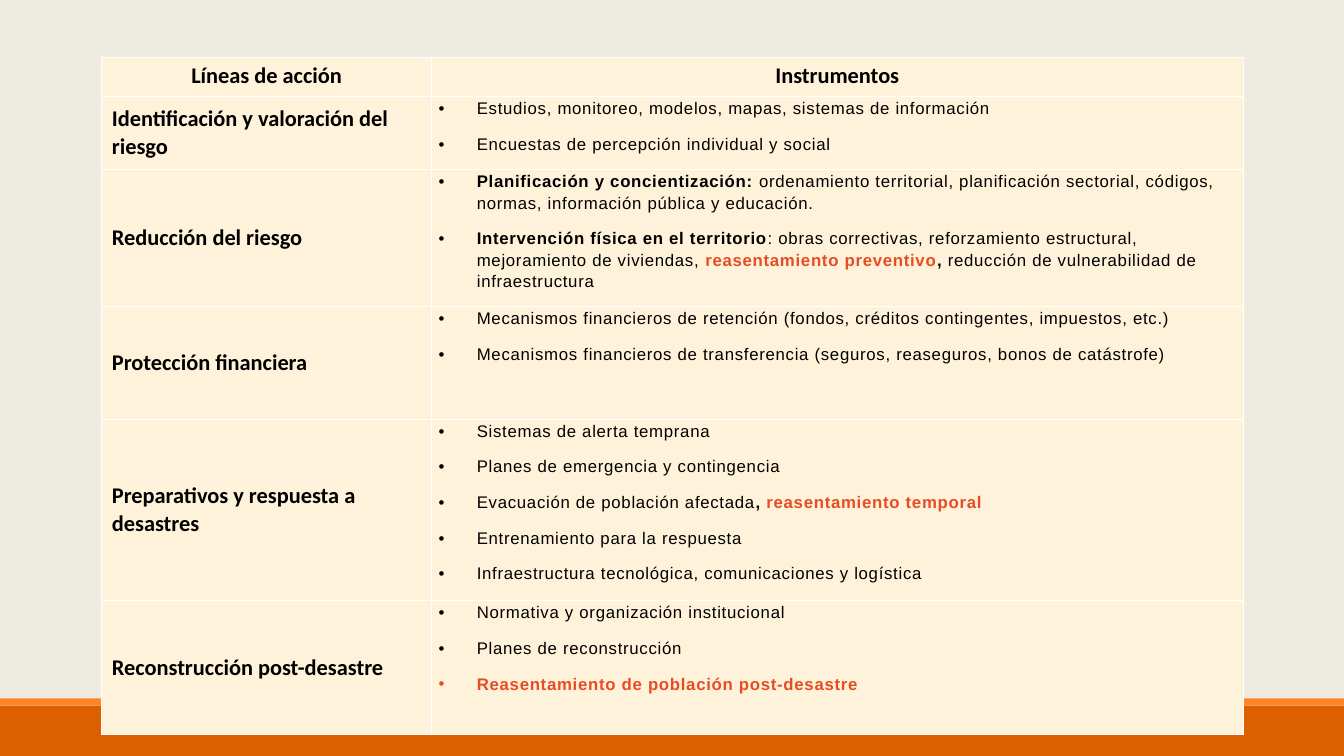
from lxml import etree
from pptx import Presentation
from pptx import util as u
from pptx.dml.color import RGBColor
from pptx.enum import shapes, text
from pptx.oxml import ns

COLORS = {"background": "EEECE1", "cell": "FFF2DA", "border": "FFFFFF", "ink": "000000",
          "accent": "E84C22", "band": "DC5F00", "band edge": "FF8427"}
WIDTH, HEIGHT = u.Inches(13.33), u.Inches(7.5)
COLUMNS = [3.27, 8.05]
ROWS = [0.39, 0.72, 1.36, 1.12, 1.8, 1.33]

# Each line of action with its instruments; an instrument is a list of (text, style) runs
PLAIN, BOLD, ACCENT = "plain", "bold", "accent"
ACTION_LINES = [
    ("Identificación y valoración del riesgo", [
        [("Estudios, monitoreo, modelos, mapas, sistemas de información", PLAIN)],
        [("Encuestas de percepción individual y social", PLAIN)]]),
    ("Reducción del riesgo", [
        [("Planificación y concientización:", BOLD),
         (" ordenamiento territorial, planificación sectorial, códigos, normas, "
          "información pública y educación.", PLAIN)],
        [("Intervención física en el territorio", BOLD),
         (": obras correctivas, reforzamiento estructural, mejoramiento de viviendas, ", PLAIN),
         ("reasentamiento preventivo", ACCENT), (",", BOLD),
         (" reducción de vulnerabilidad de infraestructura", PLAIN)]]),
    ("Protección financiera", [
        [("Mecanismos financieros de retención (fondos, créditos contingentes, "
          "impuestos, etc.)", PLAIN)],
        [("Mecanismos financieros de transferencia (seguros, reaseguros, "
          "bonos de catástrofe)", PLAIN)]]),
    ("Preparativos y respuesta a desastres", [
        [("Sistemas de alerta temprana", PLAIN)],
        [("Planes de emergencia y contingencia", PLAIN)],
        [("Evacuación de población afectada", PLAIN), (", ", BOLD),
         ("reasentamiento temporal", ACCENT)],
        [("Entrenamiento para la respuesta", PLAIN)],
        [("Infraestructura tecnológica, comunicaciones y logística", PLAIN)]]),
    ("Reconstrucción post-desastre", [
        [("Normativa y organización institucional", PLAIN)],
        [("Planes de reconstrucción", PLAIN)],
        [("Reasentamiento de población post-desastre", ACCENT)]]),
]


def add_text(paragraph, words, font="Calibri", size=16, bold=True, color="ink", spacing=0):
    run = paragraph.add_run()
    run.text = words
    run.font.name, run.font.size, run.font.bold = font, u.Pt(size), bold
    run.font.color.rgb = RGBColor.from_string(COLORS[color])
    if spacing:
        run.font._element.set("spc", str(int(spacing * 100)))


def add_bullet(paragraph):
    paragraph.line_spacing, paragraph.space_after = 1.15, u.Pt(10)
    props = paragraph._p.get_or_add_pPr()
    props.set("marL", str(u.Inches(0.38)))
    props.set("indent", str(-u.Inches(0.38)))
    etree.SubElement(props, ns.qn("a:buFont"), typeface="Arial")
    etree.SubElement(props, ns.qn("a:buChar"), char="•")
    tabs = etree.SubElement(props, ns.qn("a:tabLst"))
    etree.SubElement(tabs, ns.qn("a:tab"), pos=str(u.Inches(0.5)), algn="l")


prs = Presentation()
prs.slide_width, prs.slide_height = WIDTH, HEIGHT
slide = prs.slides.add_slide(prs.slide_layouts[6])
slide.background.fill.solid()
slide.background.fill.fore_color.rgb = RGBColor.from_string(COLORS["background"])

# Bands along the bottom
for color, top, height in [("band", 7, 0.5), ("band edge", 6.93, 0.07)]:
    band = slide.shapes.add_shape(shapes.MSO_SHAPE.RECTANGLE, 0, u.Inches(top),
                                  WIDTH, u.Inches(height))
    band.shadow.inherit = False
    band.fill.solid()
    band.fill.fore_color.rgb = RGBColor.from_string(COLORS[color])
    band.line.fill.background()

# Table grid
instruments_table = slide.shapes.add_table(
    len(ROWS), len(COLUMNS), u.Inches(1.01), u.Inches(0.57),
    u.Inches(sum(COLUMNS)), u.Inches(sum(ROWS))).table
for column, width in zip(instruments_table.columns, COLUMNS):
    column.width = u.Inches(width)
for row, height in zip(instruments_table.rows, ROWS):
    row.height = u.Inches(height)

# Cell borders, then fills
for cell in instruments_table.iter_cells():
    props = cell._tc.get_or_add_tcPr()
    for side in ("lnL", "lnR", "lnT", "lnB"):
        border = etree.SubElement(props, ns.qn(f"a:{side}"), w=str(u.Pt(1)))
        paint = etree.SubElement(border, ns.qn("a:solidFill"))
        etree.SubElement(paint, ns.qn("a:srgbClr"), val=COLORS["border"])
    cell.fill.solid()
    cell.fill.fore_color.rgb = RGBColor.from_string(COLORS["cell"])

# Header row
for column, heading in enumerate(["Líneas de acción", "Instrumentos"]):
    paragraph = instruments_table.cell(0, column).text_frame.paragraphs[0]
    paragraph.alignment = text.PP_ALIGN.CENTER
    add_text(paragraph, heading)

# Lines of action and their instruments
for row, (action, instruments) in enumerate(ACTION_LINES, start=1):
    action_cell = instruments_table.cell(row, 0)
    action_cell.vertical_anchor = text.MSO_ANCHOR.MIDDLE
    add_text(action_cell.text_frame.paragraphs[0], action)

    instruments_cell = instruments_table.cell(row, 1)
    instruments_cell.margin_left = instruments_cell.margin_right = u.Inches(0.07)
    instruments_cell.margin_top = instruments_cell.margin_bottom = 0
    frame = instruments_cell.text_frame
    for number, runs in enumerate(instruments):
        paragraph = frame.add_paragraph() if number else frame.paragraphs[0]
        add_bullet(paragraph)
        for words, style in runs:
            add_text(paragraph, words, font="Arial", size=12, bold=style != PLAIN,
                     color="accent" if style == ACCENT else "ink", spacing=0.5)

prs.save("out.pptx")
